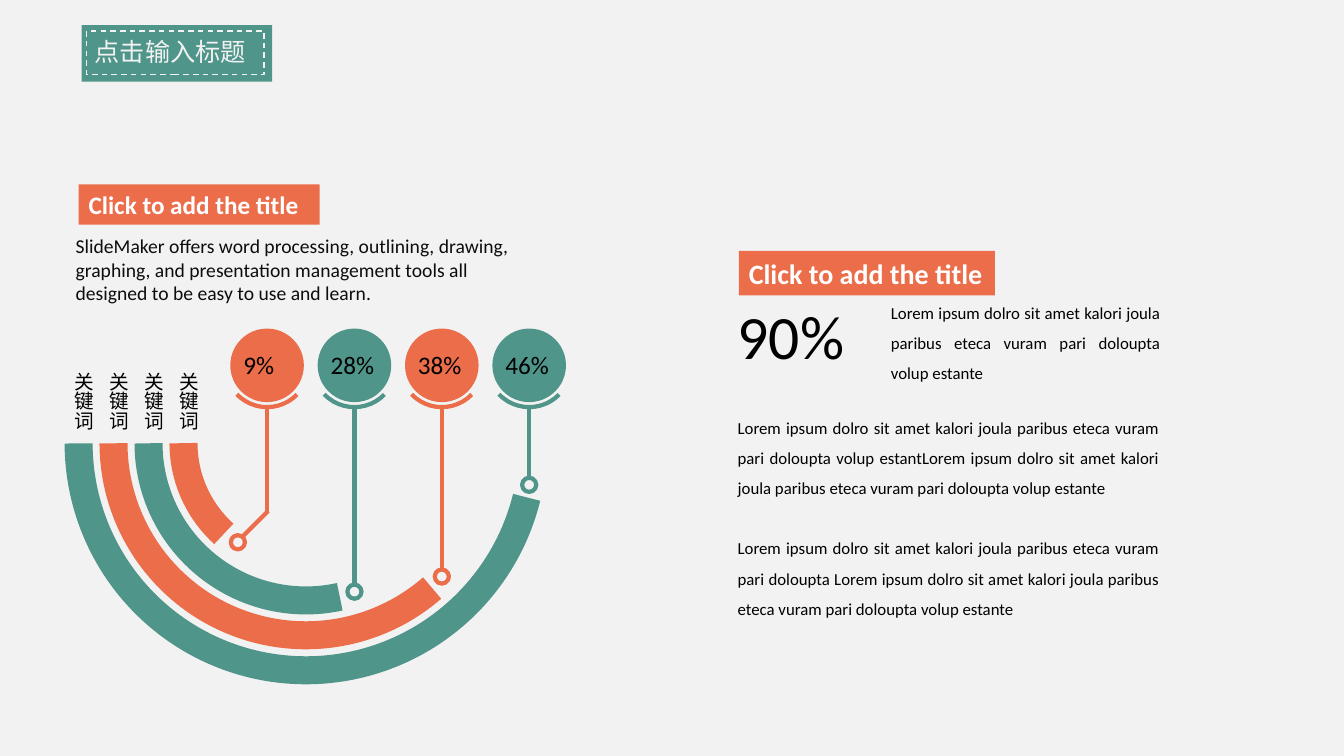
from pptx import Presentation
from pptx.dml.color import RGBColor
from pptx.enum.dml import MSO_LINE
from pptx.enum.shapes import MSO_CONNECTOR, MSO_SHAPE
from pptx.enum.text import MSO_ANCHOR, PP_ALIGN
from pptx.oxml.ns import qn
from pptx.util import Inches, Pt
from lxml import etree

RECT, OVAL, ARC = MSO_SHAPE.RECTANGLE, MSO_SHAPE.OVAL, MSO_SHAPE.ARC
STRAIGHT, DASH = MSO_CONNECTOR.STRAIGHT, MSO_LINE.DASH
LEFT, RIGHT, JUSTIFY = PP_ALIGN.LEFT, PP_ALIGN.RIGHT, PP_ALIGN.JUSTIFY
TOP, MIDDLE = MSO_ANCHOR.TOP, MSO_ANCHOR.MIDDLE

TEAL = RGBColor(0x4F, 0x95, 0x8A)
CORAL = RGBColor(0xEB, 0x6D, 0x4A)
PAPER = RGBColor(0xF2, 0xF2, 0xF2)
WHITE = RGBColor(0xFF, 0xFF, 0xFF)
BLACK = RGBColor(0, 0, 0)
INK = RGBColor(0x0D, 0x0D, 0x0D)

LATIN, CJK = "Calibri", "Noto Sans CJK SC"
WIDTH, HEIGHT = Inches(13.33), Inches(7.5)
COLS, ROWS = 160, 90

RING_X, RING_Y, RING_R, RING_STEP, RING_END = 36.42, 52.74, 14.58, 4.16, 107.94
PIN_X, PIN_STEP, DISC_Y, STEM_Y, DOT_R = 31.8, 10.4, 43.5, 48.48, 0.84
KEY_X, KEY_STEP = 6.24, 4.13
PINS = [
    ("9%", CORAL, 79.25, 64.56, 7.44),
    ("28%", TEAL, 46.55, 70.44, 9.48),
    ("38%", CORAL, 29.39, 68.64, 9.48),
    ("46%", TEAL, 8.3, 57.72, 9.48),
]

INTRO = ("SlideMaker offers word processing, outlining, drawing, graphing, and presentation "
         "management tools all designed to be easy to use and learn.")
LOREM = "Lorem ipsum dolro sit amet kalori joula paribus eteca vuram pari doloupta"
SHORT = LOREM + " volup estante"
BODY = [LOREM + " volup estant" + SHORT, LOREM + " " + SHORT]


def col(n):
    return round(WIDTH * n / COLS)


def row(n):
    return round(HEIGHT * n / ROWS)


def box(x, y, w, h):
    return col(x), row(y), col(w), row(h)


def add_shape(s, kind, at, fill=None, line=None, width=1, adj=()):
    sp = s.shapes.add_shape(kind, *box(*at))
    sp.shadow.inherit = False
    if fill is None:
        sp.fill.background()
    else:
        sp.fill.solid()
        sp.fill.fore_color.rgb = fill
    if line is None:
        sp.line.fill.background()
    else:
        sp.line.color.rgb = line
        sp.line.width = Pt(width)
    for i, value in enumerate(adj):
        sp.adjustments[i] = value
    return sp


def add_round(s, kind, x, y, r, **look):
    return add_shape(s, kind, (x - r, y - r, 2 * r, 2 * r), **look)


def add_line(s, x1, y1, x2, y2, color):
    ln = s.shapes.add_connector(STRAIGHT, col(x1), row(y1), col(x2), row(y2))
    ln.line.color.rgb = color
    ln.line.width = Pt(3)
    etree.SubElement(ln.element.spPr, qn("a:effectLst"))


def write(sp, texts, size, color=BLACK, font=LATIN, bold=False, wrap=True, anchor=TOP, **para):
    tf = sp.text_frame
    tf.word_wrap = wrap
    tf.vertical_anchor = anchor
    for i, text in enumerate(texts):
        p = tf.add_paragraph() if i else tf.paragraphs[0]
        for key, value in {"alignment": LEFT, **para}.items():
            setattr(p, key, value)
        if i:
            p.space_before = Pt(21.6)
        r = p.add_run()
        r.text = text
        for key, value in {"size": Pt(size), "bold": bold, "name": font}.items():
            setattr(r.font, key, value)
        r.font.color.rgb = color
        etree.SubElement(r.font._element, qn("a:ea")).set("typeface", CJK)
    return tf


def add_text(s, at, texts, size, **look):
    return write(s.shapes.add_textbox(*box(*at)), texts, size, **look)


def add_heading(s, at, size, wrap):
    sp = add_shape(s, RECT, at, fill=CORAL)
    write(sp, ["Click to add the title"], size, color=WHITE, bold=True, wrap=wrap, anchor=MIDDLE)


def add_title(s):
    add_shape(s, RECT, (9.72, 3, 22.68, 6.72), fill=TEAL)
    stitch = add_shape(s, RECT, (10.32, 3.72, 21.12, 5.16), line=PAPER)
    stitch.line.dash_style = DASH
    title = s.shapes.title
    title.left, title.top, title.width, title.height = box(10.08, 3.72, 23.28, 4.8)
    write(title, ["点击输入标题"], 18, color=PAPER, font=CJK)
    title.element.getparent().append(title.element)


def add_pin(s, i, label, color, ring_start, dot_y, label_w):
    x = PIN_X + i * PIN_STEP
    add_round(s, ARC, RING_X, RING_Y, RING_R + i * RING_STEP,
              line=color, width=20, adj=(ring_start, RING_END))
    if i:
        dot_x = x
        add_line(s, x, STEM_Y, x, dot_y - DOT_R, color)
    else:
        dot_x = 28.32
        add_line(s, x, STEM_Y, x, 60.96, color)
        add_line(s, x + 0.12, 60.84, 28.8, 63.96, color)
    add_round(s, OVAL, dot_x, dot_y, DOT_R, line=color, width=3)
    add_round(s, ARC, x, DISC_Y, 4.98, line=color, width=3, adj=(26.57, 81.76))
    add_round(s, OVAL, x, DISC_Y, 4.38, fill=color)
    add_text(s, (x - 4.02, 41.04, label_w, 5.28), [label], 18, wrap=False)


def add_keyword(s, i):
    at = (KEY_X + i * KEY_STEP, 43.08, 5.76, 9)
    tf = add_text(s, at, ["关键词"], 14, wrap=False, alignment=RIGHT)
    tf._txBody.bodyPr.set("vert", "eaVert")


def main():
    prs = Presentation()
    prs.slide_width, prs.slide_height = WIDTH, HEIGHT
    s = prs.slides.add_slide(prs.slide_layouts[5])
    s.background.fill.solid()
    s.background.fill.fore_color.rgb = PAPER

    add_title(s)
    for i, pin in enumerate(PINS):
        add_pin(s, i, *pin)
        add_keyword(s, i)

    tf = add_text(s, (9, 27.84, 54, 8.52), [INTRO], 14, color=INK)
    for side in ("left", "top", "right", "bottom"):
        setattr(tf, "margin_" + side, 0)
    add_heading(s, (9.36, 21.96, 28.68, 4.8), 18, True)

    add_heading(s, (87.96, 29.88, 30.48, 5.28), 20, False)
    add_text(s, (86.64, 47.88, 52.56, 30.24), BODY, 12, alignment=JUSTIFY, line_spacing=1.5)
    add_text(s, (104.88, 34.2, 34.44, 12.12), [SHORT], 12, alignment=JUSTIFY, line_spacing=1.5)
    add_text(s, (86.64, 34.92, 15.24, 10.08), ["90%"], 44, wrap=False)
    prs.save("out.pptx")


if __name__ == "__main__":
    main()
